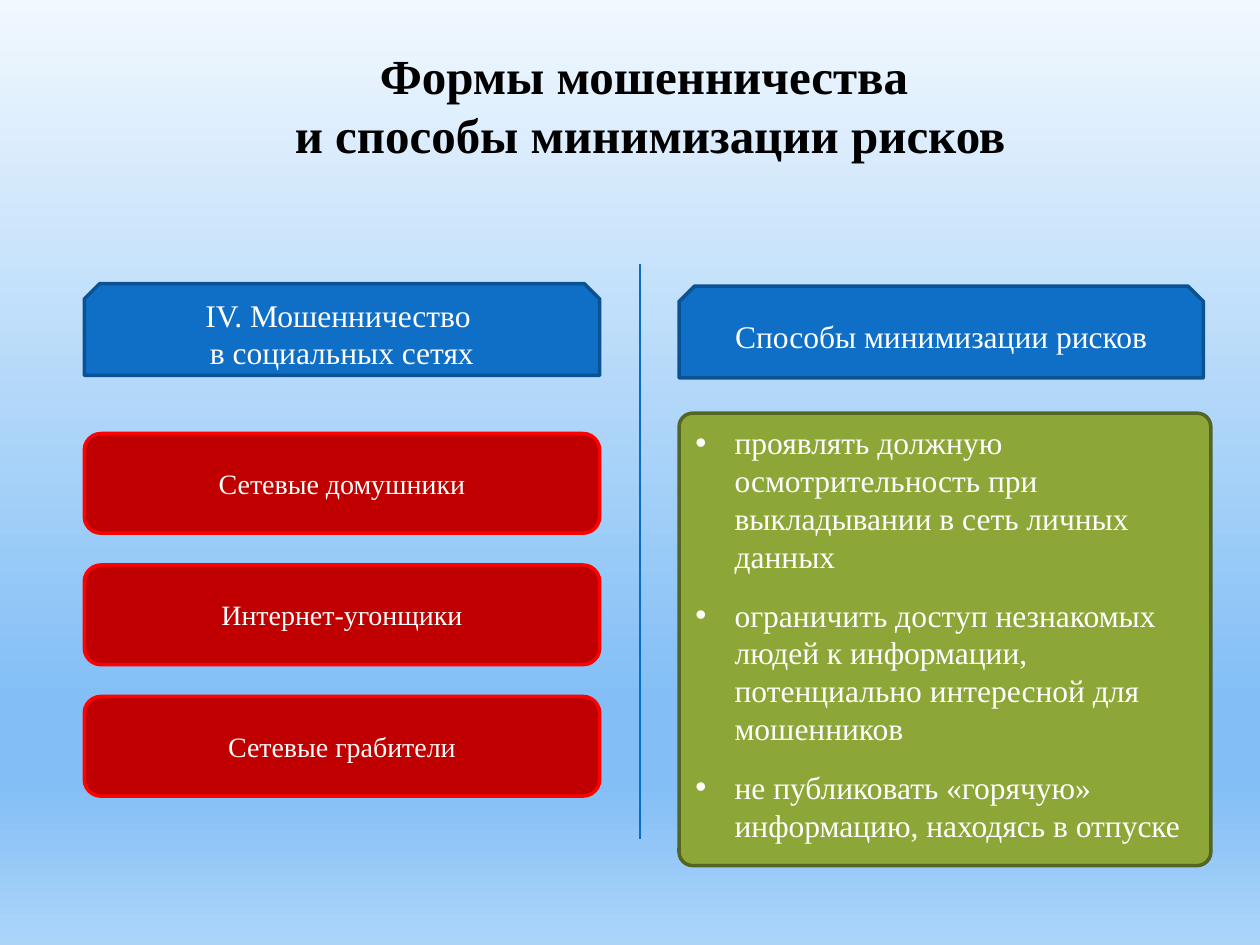
from lxml import etree
from pptx import Presentation
from pptx.dml.color import RGBColor
from pptx.enum import shapes, text
from pptx.oxml.ns import qn
from pptx.util import Cm, Pt

BLACK = RGBColor(0, 0, 0)
WHITE = RGBColor(0xFF, 0xFF, 0xFF)
BLUE = RGBColor(0x0F, 0x6F, 0xC6)
NAVY = RGBColor(0x0B, 0x52, 0x92)
RULE = RGBColor(0x0A, 0x6D, 0xC6)
CRIMSON = RGBColor(0xC0, 0, 0)
RED = RGBColor(0xFF, 0, 0)
GREEN = RGBColor(0x8C, 0xA7, 0x37)
OLIVE = RGBColor(0x54, 0x64, 0x22)
SKY = [(0, "F1F8FE"), (74, "83BFF6"), (83, "83BFF6"), (100, "ACD4F9")]

TITLE = "Формы мошенничества \nи способы минимизации рисков"
HEADS = [
    ("IV. Мошенничество \nв социальных сетях", (1.7, 5.72, 10.39, 1.85)),
    ("Способы минимизации рисков", (13.69, 5.77, 10.57, 1.85)),
]
FRAUDS = ["Сетевые домушники", "Интернет-угонщики", "Сетевые грабители"]
ADVICE = [
    "проявлять должную осмотрительность при выкладывании в сеть личных данных",
    "ограничить доступ незнакомых людей к информации, "
    "потенциально интересной для мошенников",
    "не публиковать «горячую» информацию, находясь в отпуске",
]
LEFT, TOP, WIDE, HIGH, STEP = 1.7, 8.74, 10.39, 2.01, 2.65


def write(shape, lines, size=18, color=WHITE, bold=False, bullet=False,
          align=text.PP_ALIGN.CENTER, anchor=text.MSO_ANCHOR.MIDDLE):
    frame = shape.text_frame
    frame.word_wrap = True
    frame.vertical_anchor = anchor
    for i, line in enumerate(lines):
        para = frame.add_paragraph() if i else frame.paragraphs[0]
        para.text = line
        para.alignment = align
        for run in para.runs:
            font = run.font
            font.name, font.size, font.bold = "Times New Roman", Pt(size), bold
            font.color.rgb = color
        if bullet:
            para.space_before = para.space_after = Pt(6)
            props = para._p.get_or_add_pPr()
            props.set("marL", str(Cm(0.79)))
            props.set("indent", str(-Cm(0.79)))
            etree.SubElement(props, qn("a:buFont")).set("typeface", "Arial")
            etree.SubElement(props, qn("a:buChar")).set("char", "•")


def block(slide, kind, box, fill, edge):
    shape = slide.shapes.add_shape(kind, *map(Cm, box))
    shape.shadow.inherit = False
    shape.fill.solid()
    shape.fill.fore_color.rgb = fill
    shape.line.color.rgb = edge
    shape.line.width = Pt(2)
    return shape


def paint(slide):
    """Fill the background with the vertical sky gradient."""
    fill = slide.background.fill
    fill.gradient()
    fill.gradient_angle = 270
    stops = slide.element.find(".//" + qn("a:gsLst"))
    for stop in list(stops):
        stops.remove(stop)
    for pos, tone in SKY:
        stop = etree.SubElement(stops, qn("a:gs"), pos=str(pos * 1000))
        etree.SubElement(stop, qn("a:srgbClr"), val=tone)


def main():
    deck = Presentation()
    deck.slide_width, deck.slide_height = Cm(25.4), Cm(19.05)
    slide = deck.slides.add_slide(deck.slide_layouts[5])
    paint(slide)

    title = slide.shapes.title
    title.left, title.top, title.width, title.height = map(
        Cm, (3.58, 0.79, 19.05, 2.64))
    write(title, [TITLE], size=28, color=BLACK, bold=True,
          anchor=text.MSO_ANCHOR.TOP)

    kinds = shapes.MSO_SHAPE
    for i, fraud in enumerate(FRAUDS):
        box = LEFT, TOP + i * STEP, WIDE, HIGH
        card = block(slide, kinds.ROUNDED_RECTANGLE, box, CRIMSON, RED)
        write(card, [fraud], size=16)

    for head, box in HEADS:
        write(block(slide, kinds.SNIP_2_SAME_RECTANGLE, box, BLUE, NAVY), [head])

    panel = block(slide, kinds.ROUNDED_RECTANGLE, (13.69, 8.33, 10.72, 9.12),
                  GREEN, OLIVE)
    panel.adjustments[0] = 0.03
    write(panel, ADVICE, bullet=True, align=text.PP_ALIGN.LEFT,
          anchor=text.MSO_ANCHOR.TOP)

    rule = slide.shapes.add_connector(
        shapes.MSO_CONNECTOR.STRAIGHT, *map(Cm, (12.9, 5.33, 12.9, 16.92)))
    rule.line.color.rgb = RULE
    rule.line.width = Pt(0.75)
    etree.SubElement(rule._element.spPr, qn("a:effectLst"))

    deck.save("out.pptx")


if __name__ == "__main__":
    main()
